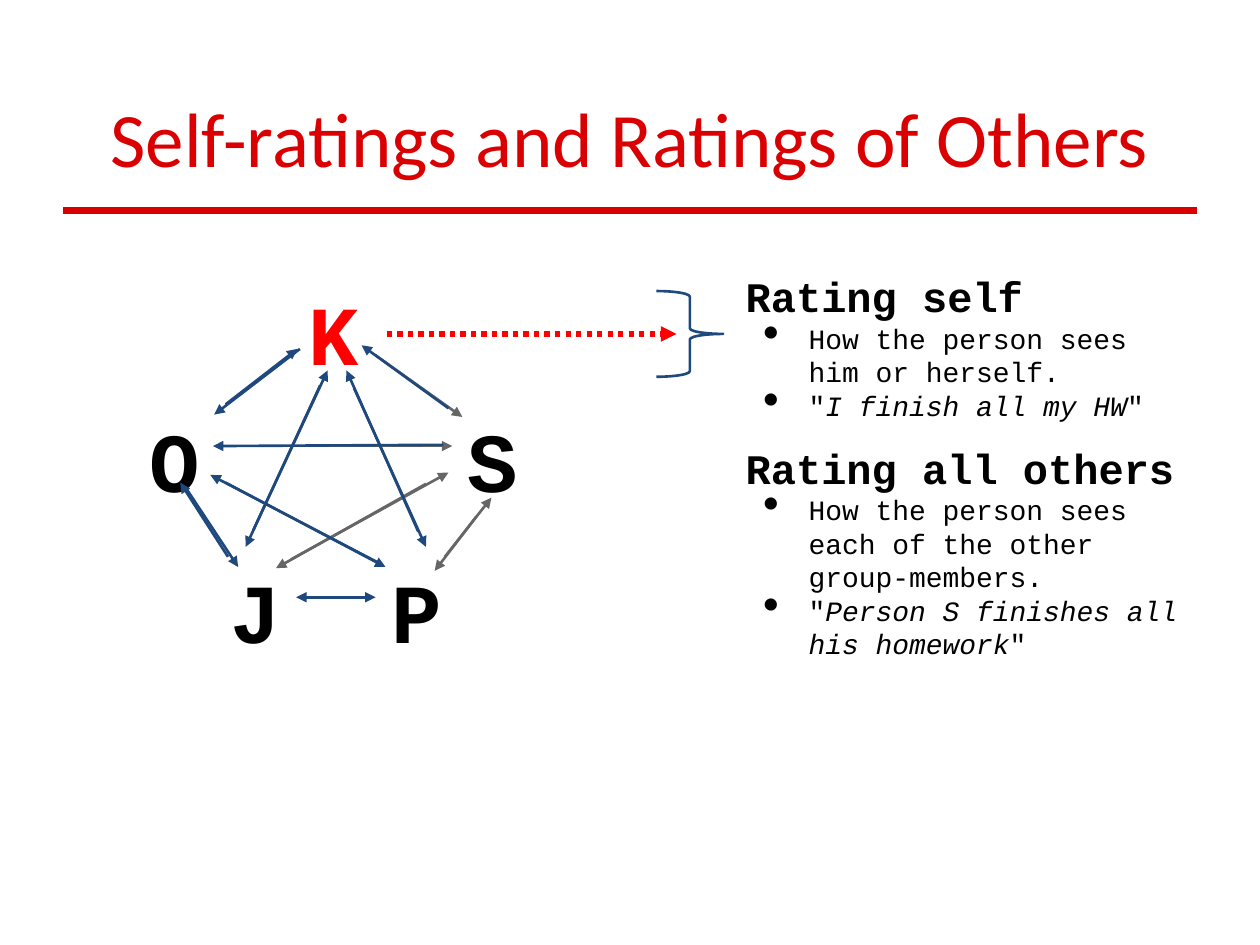
from dataclasses import dataclass

from lxml import etree
from pptx import Presentation
from pptx.dml.color import RGBColor
from pptx.enum.dml import MSO_LINE
from pptx.enum.shapes import MSO_CONNECTOR, MSO_SHAPE
from pptx.enum.text import MSO_ANCHOR, PP_ALIGN
from pptx.oxml.ns import qn
from pptx.util import Pt

STRAIGHT = MSO_CONNECTOR.STRAIGHT
RIGHT_BRACE = MSO_SHAPE.RIGHT_BRACE
DOTTED = MSO_LINE.ROUND_DOT
TOP, BOTTOM = MSO_ANCHOR.TOP, MSO_ANCHOR.BOTTOM
LEFT, CENTER = PP_ALIGN.LEFT, PP_ALIGN.CENTER


@dataclass(frozen=True)
class Theme:
    title_font: str = "Calibri"
    body_font: str = "Courier New"
    title_red: str = "DA0002"
    self_red: str = "FF0000"
    blue: str = "1F497D"
    grey: str = "666666"
    black: str = "000000"
    title_size: float = 44
    member_size: float = 48
    heading_size: float = 24
    bullet_size: float = 16
    inset: float = 7.2
    arrow_width: float = 1.5


THEME = Theme()

# Group members: left and top within the network box
MEMBERS = {
    "K": (90.7, 0),
    "S": (181.4, 72.7),
    "J": (46.1, 159.1),
    "P": (138.2, 159.1),
    "O": (0, 72.7),
}

# Ratings: start and end points within the network box, arrowhead at the end
GREY_RATINGS = [
    (164.9, 123.1, 79.2, 171.3),
    (53.3, 101.5, 180, 101.5),
    (136.1, 49.6, 185.7, 84.9),
    (87.8, 166.3, 177.8, 116.6),
    (193.7, 141.8, 169.9, 172.8),
    (175.7, 164.8, 202.3, 131),
]
BLUE_RATINGS = [
    (174.9, 100.8, 43.2, 101.5),
    (92.9, 46, 43.9, 83.5),
    (104.4, 66.9, 61.9, 159.1),
    (123.8, 68.4, 164.9, 159.1),
    (139.7, 169.2, 41.7, 118),
    (51.8, 164.8, 24.5, 122.4),
    (28.1, 126, 57.6, 170.6),
    (50.4, 122.4, 141.8, 170.6),
    (50.4, 77.7, 91.4, 46),
    (177.8, 79.9, 128.1, 43.9),
    (66.2, 149.7, 108.7, 58.3),
    (160.5, 150.4, 119.5, 58.3),
]
MUTUAL_RATING = (90.7, 187.9, 136.1, 187.9)


def rgb(color):
    return RGBColor.from_string(color)


def add_run(paragraph, text, *, size, font=THEME.body_font, color=THEME.black,
            bold=False, italic=False):
    run = paragraph.add_run()
    run.text = text
    run.font.name = font
    run.font.size = Pt(size)
    run.font.color.rgb = rgb(color)
    run.font.bold = bold
    run.font.italic = italic


def add_frame(slide, box, anchor=TOP):
    frame = slide.shapes.add_textbox(*map(Pt, box)).text_frame
    frame.word_wrap = True
    frame.vertical_anchor = anchor
    frame.margin_left = frame.margin_right = Pt(THEME.inset)
    frame.margin_top = frame.margin_bottom = Pt(THEME.inset)
    return frame


def add_text(slide, box, text, *, anchor=TOP, align=LEFT, **run_format):
    paragraph = add_frame(slide, box, anchor).paragraphs[0]
    paragraph.alignment = align
    add_run(paragraph, text, **run_format)


def add_bullet(frame, parts):
    """Add a bulleted paragraph from (text, italic) parts."""
    paragraph = frame.add_paragraph()
    properties = paragraph._p.get_or_add_pPr()
    properties.set("marL", str(Pt(36)))
    properties.set("indent", str(Pt(-26)))
    bullet_color = etree.SubElement(properties, qn("a:buClr"))
    etree.SubElement(bullet_color, qn("a:srgbClr"), val=THEME.black)
    etree.SubElement(properties, qn("a:buSzPct"), val="167000")
    etree.SubElement(properties, qn("a:buChar"), char="•")
    for text, italic in parts:
        add_run(paragraph, text, size=THEME.bullet_size, italic=italic)


def add_line(slide, points, color, width, *, heads=(), dash=None):
    connector = slide.shapes.add_connector(STRAIGHT, *map(Pt, points))
    connector.line.color.rgb = rgb(color)
    connector.line.width = Pt(width)
    if dash is not None:
        connector.line.dash_style = dash
    outline = connector.line._get_or_add_ln()
    for end in heads:
        etree.SubElement(outline, qn(f"a:{end}"), type="triangle")
    etree.SubElement(connector._element.spPr, qn("a:effectLst"))


def add_title(slide, box):
    left, top, width, height = box
    rule_y = top + height + 8.6
    add_line(slide, (left, rule_y, left + width, rule_y), THEME.title_red, 4)
    add_text(slide, box, "Self-ratings and Ratings of Others", anchor=BOTTOM,
             align=CENTER, font=THEME.title_font, size=THEME.title_size,
             color=THEME.title_red)


def add_network(slide, box):
    left, top = box[:2]

    def add_rating(points, color, heads=("tailEnd",)):
        x1, y1, x2, y2 = points
        add_line(slide, (left + x1, top + y1, left + x2, top + y2), color,
                 THEME.arrow_width, heads=heads)

    # Members
    for member, (x, y) in MEMBERS.items():
        color = THEME.self_red if member == "K" else THEME.black
        add_text(slide, (left + x, top + y, 45.4, 59), member,
                 size=THEME.member_size, bold=True, color=color)

    # Ratings between members
    for points in GREY_RATINGS:
        add_rating(points, THEME.grey)
    for points in BLUE_RATINGS:
        add_rating(points, THEME.blue)
    add_rating(MUTUAL_RATING, THEME.blue, ("headEnd", "tailEnd"))


def add_self_rating(slide, box):
    """Dotted arrow leading into a brace at the right of the box."""
    left, top, width, height = box
    brace_width = 38.2
    brace = slide.shapes.add_shape(
        RIGHT_BRACE, Pt(left + width - brace_width), Pt(top),
        Pt(brace_width), Pt(height))
    brace.shadow.inherit = False
    brace.fill.background()
    brace.line.color.rgb = rgb(THEME.blue)
    brace.line.width = Pt(THEME.arrow_width)
    middle = top + height / 2
    add_line(slide, (left, middle, left + 165.6, middle), THEME.self_red, 3,
             heads=("tailEnd",), dash=DOTTED)


def add_explanation(slide, box, heading, description, example):
    frame = add_frame(slide, box)
    add_run(frame.paragraphs[0], heading, size=THEME.heading_size, bold=True)
    add_bullet(frame, [(description, False)])
    add_bullet(frame, [('"', False), (example, True), ('"', False)])


def main():
    prs = Presentation()
    prs.slide_width, prs.slide_height = Pt(720), Pt(540)
    slide = prs.slides.add_slide(prs.slide_layouts[6])

    add_title(slide, (36, 21.6, 648, 90))
    add_self_rating(slide, (221, 166.3, 192.3, 49))
    add_network(slide, (78.5, 153.4, 226.8, 218.1))
    add_explanation(slide, (419, 147.6, 265, 61.2), "Rating self",
                    "How the person sees him or herself.",
                    "I finish all my HW")
    add_explanation(slide, (419, 245.5, 265, 98.6), "Rating all others",
                    "How the person sees each of the other group-members.",
                    "Person S finishes all his homework")
    prs.save("out.pptx")


if __name__ == "__main__":
    main()
